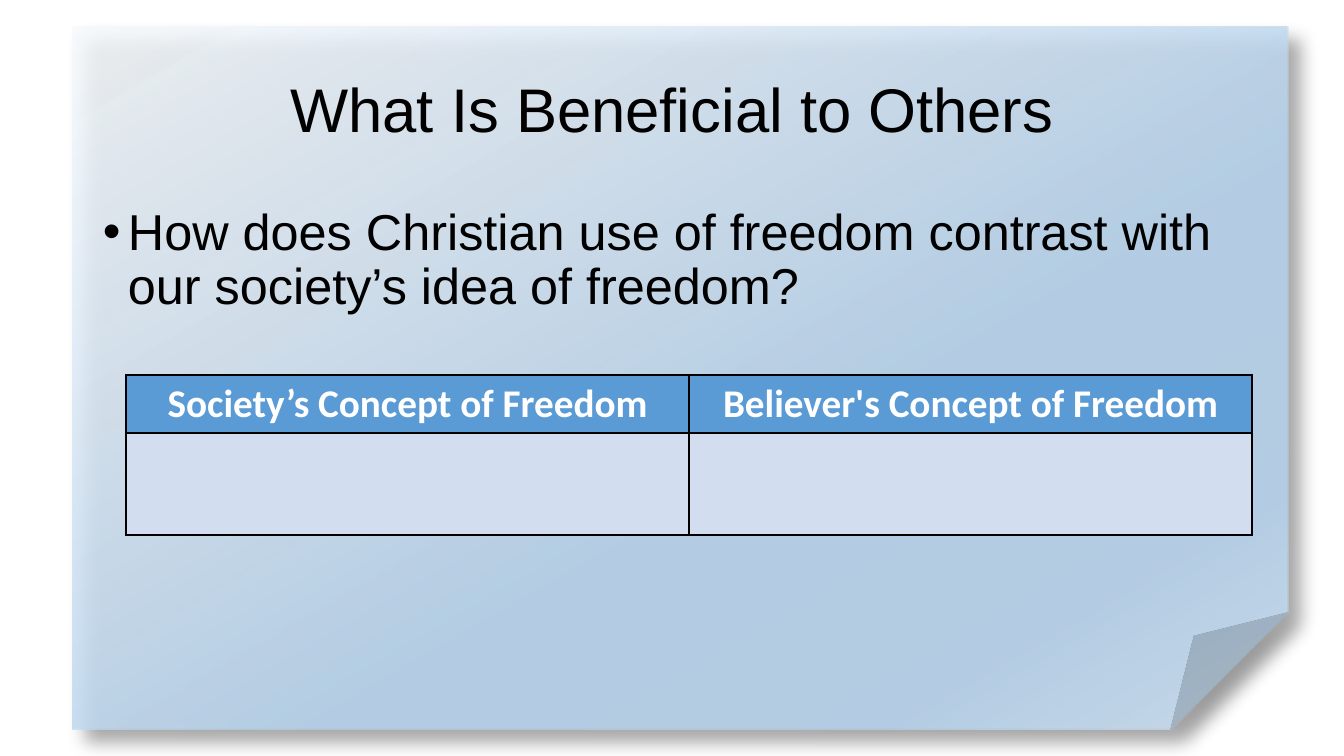
from pptx import Presentation
from pptx.dml.color import RGBColor
from pptx.enum.shapes import MSO_SHAPE
from pptx.enum.text import MSO_ANCHOR, PP_ALIGN
from pptx.oxml import parse_xml
from pptx.oxml.ns import nsdecls, qn
from pptx.util import Emu, Pt

SCALE = 914400 / 100.8
COLORS = {
    "text": "000000",
    "border": "000000",
    "shadow": "000000",
    "header": "5B9BD5",
    "header text": "FFFFFF",
    "cell": "D2DEEF",
    "sheet light": "F7FAFD",
    "sheet middle": "B5D2EC",
    "sheet end": "CEE1F2",
}
# position %, colour, opacity %
SHEET_STOPS = [
    (0, "sheet light", 83),
    (60, "sheet middle", 86),
    (83, "sheet middle", 87),
    (100, "sheet end", 87),
]


def px(length):
    return Emu(round(length * SCALE))


def color(name):
    return RGBColor.from_string(COLORS[name])


def color_xml(name, opacity):
    return f'<a:srgbClr val="{COLORS[name]}"><a:alpha val="{opacity * 1000}"/></a:srgbClr>'


def format_paragraph(paragraph, font_name, size, color_name, bold=False):
    font = paragraph.font
    for run in paragraph.runs:
        font = run.font
    font.name = font_name
    font.size = Pt(size)
    font.bold = bold
    font.color.rgb = color(color_name)


def add_sheet(slide, box):
    """Paper sheet with a folded corner, translucent gradient and soft shadow."""
    sheet = slide.shapes.add_shape(MSO_SHAPE.FOLDED_CORNER, *map(px, box))
    sheet.line.fill.background()
    sheet.fill.background()
    stops = "".join(
        f'<a:gs pos="{position * 1000}">{color_xml(name, opacity)}</a:gs>'
        for position, name, opacity in SHEET_STOPS
    )
    properties = sheet.fill._xPr
    properties.replace(
        properties.find(qn("a:noFill")),
        parse_xml(
            f'<a:gradFill {nsdecls("a")} rotWithShape="1"><a:gsLst>{stops}</a:gsLst>'
            f'<a:lin ang="{60 * 60000}" scaled="0"/></a:gradFill>'
        ),
    )
    sheet.shadow.inherit = False
    properties.find(qn("a:effectLst")).append(
        parse_xml(
            f'<a:outerShdw {nsdecls("a")} blurRad="{Pt(13)}" dist="{Pt(13)}" '
            f'dir="{45 * 60000}" algn="tl" rotWithShape="0">'
            f'{color_xml("shadow", 40)}</a:outerShdw>'
        )
    )


def add_text(slide, box, text, size, anchor, bulleted=False):
    frame = slide.shapes.add_textbox(*map(px, box)).text_frame
    frame.word_wrap = True
    frame.vertical_anchor = anchor
    frame.text = text
    paragraph = frame.paragraphs[0]
    paragraph.line_spacing = 0.9
    if bulleted:
        properties = paragraph._p.get_or_add_pPr()
        properties.set("marL", str(px(25)))
        properties.set("indent", str(-px(25)))
        properties.append(parse_xml(f'<a:buFont {nsdecls("a")} typeface="Arial"/>'))
        properties.append(parse_xml(f'<a:buChar {nsdecls("a")} char="•"/>'))
    else:
        paragraph.alignment = PP_ALIGN.CENTER
    format_paragraph(paragraph, "Arial", size, "text")


def add_borders(cell):
    properties = cell._tc.get_or_add_tcPr()
    for side in ("lnL", "lnR", "lnT", "lnB"):
        properties.append(
            parse_xml(
                f'<a:{side} {nsdecls("a")} w="{Pt(1)}"><a:solidFill>'
                f'<a:srgbClr val="{COLORS["border"]}"/></a:solidFill></a:{side}>'
            )
        )


def add_comparison(slide, box, headings, row_heights):
    """Table with one heading per column over an empty row to fill in."""
    table = slide.shapes.add_table(
        len(row_heights), len(headings), *map(px, box)
    ).table
    table.horz_banding = False
    for row, height in zip(table.rows, row_heights):
        row.height = px(height)
    for row_index, texts in enumerate([headings, [""] * len(headings)]):
        for column_index, text in enumerate(texts):
            cell = table.cell(row_index, column_index)
            add_borders(cell)
            cell.fill.solid()
            cell.fill.fore_color.rgb = color("cell" if row_index else "header")
            if text:
                cell.text = text
                paragraph = cell.text_frame.paragraphs[0]
                paragraph.alignment = PP_ALIGN.CENTER
                format_paragraph(paragraph, "Calibri", 28, "header text", bold=True)


def build_question_slide(presentation):
    slide = presentation.slides.add_slide(presentation.slide_layouts[6])
    add_sheet(slide, (73, 27, 1215, 703))
    add_text(slide, (93, 40, 1159, 146), "What Is Beneficial to Others", 44,
             MSO_ANCHOR.MIDDLE)
    add_text(slide, (93, 202, 1159, 480),
             "How does Christian use of freedom contrast with our society’s idea of freedom?",
             36, MSO_ANCHOR.TOP, bulleted=True)
    add_comparison(slide, (126, 375, 1126, 160),
                   ["Society’s Concept of Freedom", "Believer's Concept of Freedom"],
                   [58, 102])


def main():
    presentation = Presentation()
    presentation.slide_width = px(1344)
    presentation.slide_height = px(756)
    build_question_slide(presentation)
    presentation.save("out.pptx")


if __name__ == "__main__":
    main()
